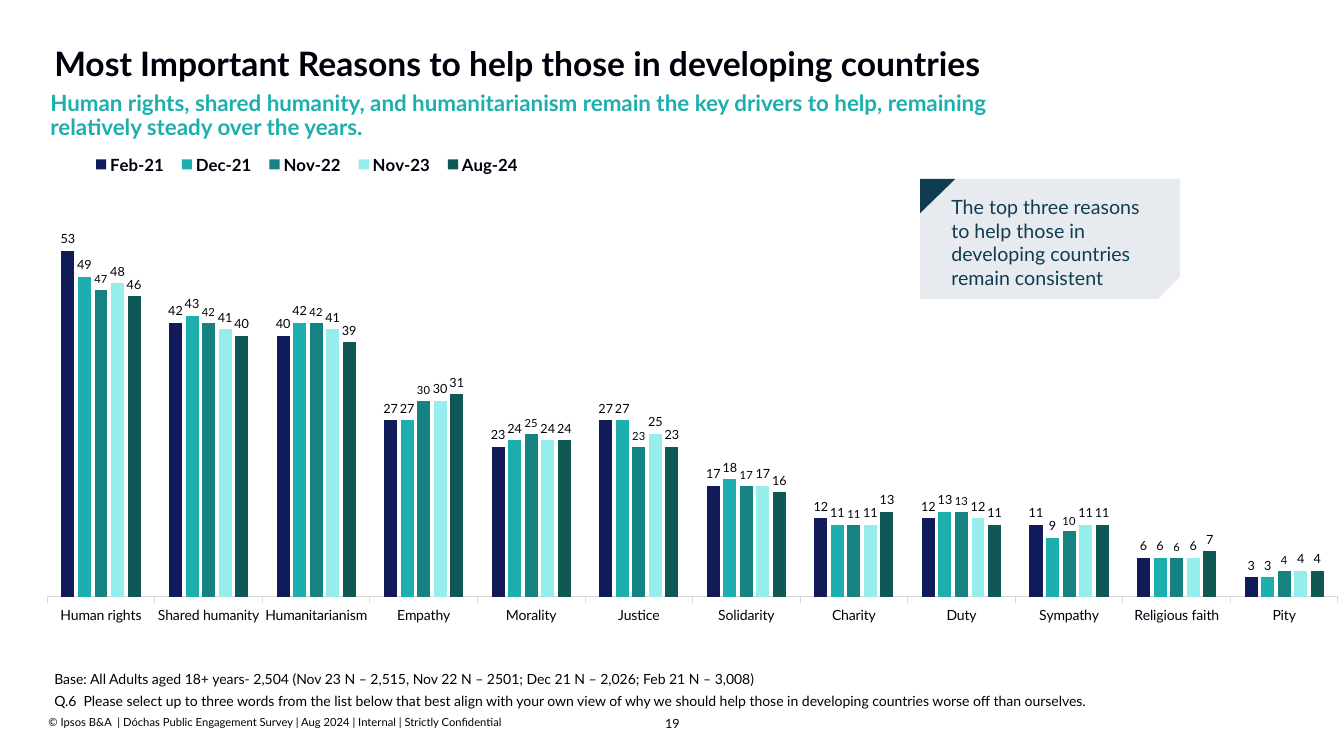
import pptx
import pptx.chart.data
import pptx.dml.color
import pptx.enum.chart
import pptx.enum.shapes
import pptx.enum.text
import pptx.oxml
import pptx.oxml.ns
import pptx.util

Inches = pptx.util.Inches
Pt = pptx.util.Pt
INK = "00000C"
TEAL = "1DAFAD"
NAVY = "103C50"
REASONS = ["Human rights", "Shared humanity", "Humanitarianism", "Empathy", "Morality", "Justice",
           "Solidarity", "Charity", "Duty", "Sympathy", "Religious faith", "Pity"]
WAVES = [
    ("Feb-21", "121B5A", 9, [53, 42, 40, 27, 23, 27, 17, 12, 12, 11, 6, 3]),
    ("Dec-21", TEAL, 9, [49, 43, 42, 27, 24, 27, 18, 11, 13, 9, 6, 3]),
    ("Nov-22", "168382", 8, [47, 42, 42, 30, 25, 23, 17, 11, 13, 10, 6, 4]),
    ("Nov-23", "96EEEC", 9, [48, 41, 41, 30, 24, 25, 17, 11, 12, 11, 6, 4]),
    ("Aug-24", "0F5856", 9, [46, 40, 39, 31, 24, 23, 16, 13, 11, 11, 7, 4]),
]


def color(value):
    """Turn a hex string into a colour."""
    return pptx.dml.color.RGBColor.from_string(value)


def set_font(font, size, ink, bold=False):
    """Apply the slide's typeface with a size, colour and weight."""
    for name, value in {"name": "Lato", "size": Pt(size), "bold": bold}.items():
        setattr(font, name, value)
    font.color.rgb = color(ink)


def fill_text(shape, lines, size, ink, bold=False, insets=(0, 0, 0, 0), hanging=0, **paragraph_format):
    """Write paragraphs into a shape's text frame."""
    frame = shape.text_frame
    frame.word_wrap = True
    frame.vertical_anchor = pptx.enum.text.MSO_ANCHOR.TOP
    for side, inset in zip(("left", "top", "right", "bottom"), insets):
        setattr(frame, f"margin_{side}", Inches(inset))
    for index, line in enumerate(lines):
        paragraph = frame.add_paragraph() if index else frame.paragraphs[0]
        run = paragraph.add_run()
        run.text = line
        set_font(run.font, size, ink, bold)
        for name, value in paragraph_format.items():
            setattr(paragraph, name, value)
        if hanging:
            properties = paragraph._p.get_or_add_pPr()
            properties.set("marL", str(Inches(hanging)))
            properties.set("indent", str(-Inches(hanging)))


def add_text(slide, box, lines, size, ink, **text_format):
    """Add a text box."""
    shape = slide.shapes.add_textbox(*map(Inches, box))
    fill_text(shape, lines, size, ink, **text_format)


def add_turned_shape(slide, preset, box, fill):
    """Add a plain filled shape turned by a quarter."""
    shape = slide.shapes.add_shape(preset, *map(Inches, box))
    shape.rotation = 90
    shape.shadow.inherit = False
    shape.fill.solid()
    shape.fill.fore_color.rgb = color(fill)
    shape.line.fill.background()
    return shape


def add_callout(slide):
    """Add the note with its snipped and folded corners."""
    presets = pptx.enum.shapes.MSO_SHAPE
    note = add_turned_shape(slide, presets.SNIP_1_RECTANGLE, (9.82, 1.08, 1.19, 2.58), "E7EBF0")
    note.adjustments[0] = 0.185
    fill_text(note, ["The top three reasons to help those in developing countries remain consistent"],
              14, NAVY, insets=(0.16, 0.08, 0.08, 0.31), space_after=Pt(5),
              alignment=pptx.enum.text.PP_ALIGN.LEFT)
    note.text_frame._txBody.bodyPr.set("vert", "vert270")
    add_turned_shape(slide, presets.RIGHT_TRIANGLE, (9.13, 1.77, 0.34, 0.35), NAVY)


def manual_layout(x, y, width, height, target=""):
    """Build a chart layout from fractions of the chart area."""
    fields = {"xMode": "edge", "yMode": "edge", "x": x, "y": y, "w": width, "h": height}
    body = target + "".join(f'<c:{name} val="{value}"/>' for name, value in fields.items())
    return pptx.oxml.parse_xml(f'<c:layout {pptx.oxml.ns.nsdecls("c")}>'
                               f"<c:manualLayout>{body}</c:manualLayout></c:layout>")


def place_plot(chart):
    """Fix the place of the plot area and of the legend."""
    plot_area = chart._chartSpace.chart.plotArea
    for layout in plot_area.findall(pptx.oxml.ns.qn("c:layout")):
        plot_area.remove(layout)
    plot_area.insert(0, manual_layout(0.023, 0.127, 0.954, 0.79, '<c:layoutTarget val="inner"/>'))
    legend = chart.legend._element
    for layout in legend.findall(pptx.oxml.ns.qn("c:layout")):
        legend.remove(layout)
    legend.find(pptx.oxml.ns.qn("c:legendPos")).addnext(manual_layout(0.05, 0.02, 0.33, 0.05))


def style_axes(chart):
    """Show the reasons below a thin line and hide the values."""
    enums = pptx.enum.chart
    reasons = chart.category_axis
    reasons.tick_label_position = enums.XL_TICK_LABEL_POSITION.LOW
    reasons.major_tick_mark = enums.XL_TICK_MARK.OUTSIDE
    reasons.format.line.color.rgb = color("D9D9D9")
    reasons.format.line.width = Pt(0.75)
    set_font(reasons.tick_labels.font, 10, INK)
    for name, value in {"minimum_scale": 0, "maximum_scale": 60, "visible": False,
                        "has_major_gridlines": False}.items():
        setattr(chart.value_axis, name, value)


def add_reasons_chart(slide):
    """Add the clustered columns of reasons by survey wave."""
    enums = pptx.enum.chart
    data = pptx.chart.data.CategoryChartData()
    data.categories = REASONS
    for name, _, _, values in WAVES:
        data.add_series(name, values)
    box = map(Inches, (0.16, 1.41, 13.42, 4.92))
    chart = slide.shapes.add_chart(enums.XL_CHART_TYPE.COLUMN_CLUSTERED, *box, data).chart
    set_font(chart.font, 12, INK)
    chart.has_title = False
    chart.has_legend = True
    chart.legend.position = enums.XL_LEGEND_POSITION.BOTTOM
    chart.legend.include_in_layout = False
    set_font(chart.legend.font, 12, INK, True)
    style_axes(chart)
    plot = chart.plots[0]
    for name, value in {"gap_width": 219, "overlap": -27, "vary_by_categories": False}.items():
        setattr(plot, name, value)
    for series, (_, fill, label_size, _) in zip(plot.series, WAVES):
        series.format.fill.solid()
        series.format.fill.fore_color.rgb = color(fill)
        series.data_labels.show_value = True
        series.data_labels.position = enums.XL_LABEL_POSITION.OUTSIDE_END
        set_font(series.data_labels.font, label_size, INK)
    place_plot(chart)


def main():
    """Build the slide and save it."""
    presentation = pptx.Presentation()
    presentation.slide_width = Inches(13.33)
    presentation.slide_height = Inches(7.5)
    slide = presentation.slides.add_slide(presentation.slide_layouts[6])
    add_text(slide, (6.4, 7.09, 0.54, 0.15), ["19"], 9, "000000", line_spacing=1.1,
             alignment=pptx.enum.text.PP_ALIGN.CENTER)
    add_text(slide, (0.48, 7.1, 6.1, 0.13),
             ["© Ipsos B&A  | Dóchas Public Engagement Survey | Aug 2024 | Internal | Strictly Confidential"],
             8, "000000")
    add_text(slide, (0.44, 0.42, 12.34, 0.78),
             ["Most Important Reasons to help those in developing countries"],
             24, INK, bold=True, insets=(0.1, 0.05, 0.1, 0.05), line_spacing=0.9)
    add_text(slide, (0.5, 0.91, 10, 0.55),
             ["Human rights, shared humanity, and humanitarianism remain the key drivers to help, "
              "remaining relatively steady over the years."],
             16, TEAL, bold=True, line_spacing=0.9)
    add_text(slide, (0.44, 6.58, 10.74, 0.38),
             ["Base: All Adults aged 18+ years- 2,504 (Nov 23 N – 2,515, Nov 22 N – 2501; "
              "Dec 21 N – 2,026; Feb 21 N – 3,008)",
              "Q.6  Please select up to three words from the list below that best align with your own "
              "view of why we should help those in developing countries worse off than ourselves."],
             10, "000000", insets=(0.1, 0.05, 0.1, 0.05), hanging=0.39,
             line_spacing=1.15, space_after=Pt(2))
    add_reasons_chart(slide)
    add_callout(slide)
    presentation.save("out.pptx")


if __name__ == "__main__":
    main()
